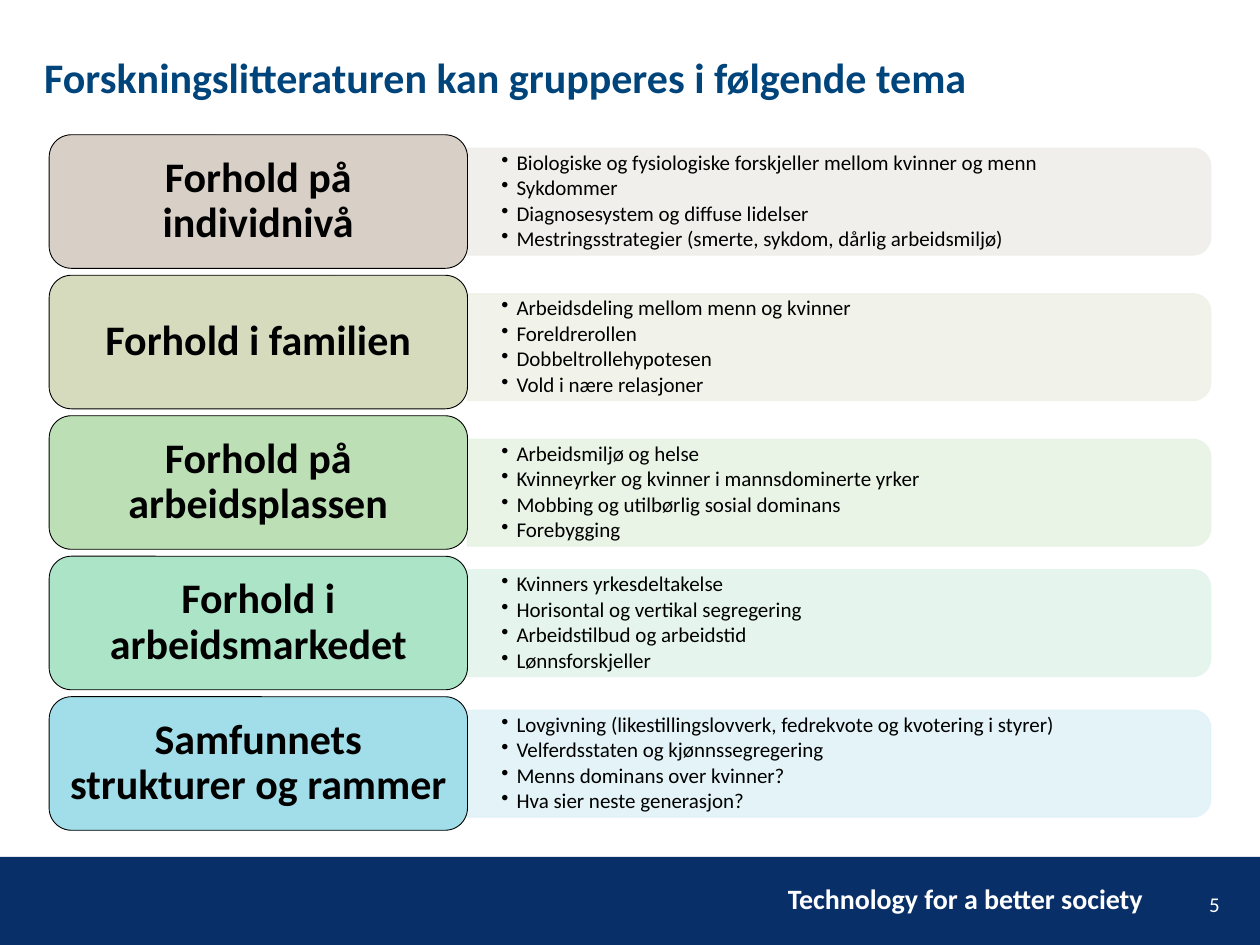
from lxml import etree
from pptx import Presentation
from pptx.dml.color import RGBColor
from pptx.enum.shapes import MSO_SHAPE
from pptx.enum.text import MSO_ANCHOR, PP_ALIGN
from pptx.oxml.ns import qn
from pptx.util import Inches, Pt

RECT = MSO_SHAPE.RECTANGLE
ROUNDED = MSO_SHAPE.ROUNDED_RECTANGLE
ROUNDED_SIDE = MSO_SHAPE.ROUND_2_SAME_RECTANGLE
TOP, MIDDLE = MSO_ANCHOR.TOP, MSO_ANCHOR.MIDDLE
LEFT, CENTER, RIGHT = PP_ALIGN.LEFT, PP_ALIGN.CENTER, PP_ALIGN.RIGHT

BLACK = RGBColor(0x00, 0x00, 0x00)
WHITE = RGBColor(0xFF, 0xFF, 0xFF)
NAVY = RGBColor(0x08, 0x2F, 0x68)
TITLE_BLUE = RGBColor(0x00, 0x44, 0x7C)
SAND, SAND_PALE = RGBColor(0xD8, 0xD0, 0xC7), RGBColor(0xF0, 0xEE, 0xEB)
OLIVE, OLIVE_PALE = RGBColor(0xD6, 0xDB, 0xBE), RGBColor(0xF0, 0xF2, 0xE8)
GREEN, GREEN_PALE = RGBColor(0xBC, 0xDF, 0xB5), RGBColor(0xE7, 0xF3, 0xE5)
MINT, MINT_PALE = RGBColor(0xAB, 0xE4, 0xC7), RGBColor(0xE3, 0xF5, 0xEC)
AQUA, AQUA_PALE = RGBColor(0xA1, 0xDE, 0xE9), RGBColor(0xE0, 0xF2, 0xF7)

# Grid of 100 columns by 75 rows on the slide
COLUMNS, ROWS = 100, 75
LABEL_COL, LABEL_COLS, LABEL_ROWS = 3.9, 33.2, 10.6
PANEL_COLS, PANEL_ROWS = 59, 8.5
FIRST_ROW, ROW_PITCH = 10.7, 11.15

# Heading, label colour, panel colour, panel shift in rows, points
THEMES = [
    ("Forhold på individnivå", SAND, SAND_PALE, 0, [
        "Biologiske og fysiologiske forskjeller mellom kvinner og menn",
        "Sykdommer",
        "Diagnosesystem og diffuse lidelser",
        "Mestringsstrategier (smerte, sykdom, dårlig arbeidsmiljø)"]),
    ("Forhold i familien", OLIVE, OLIVE_PALE, 0.4, [
        "Arbeidsdeling mellom menn og kvinner",
        "Foreldrerollen",
        "Dobbeltrollehypotesen",
        "Vold i nære relasjoner"]),
    ("Forhold på arbeidsplassen", GREEN, GREEN_PALE, 0.8, [
        "Arbeidsmiljø og helse",
        "Kvinneyrker og kvinner i mannsdominerte yrker",
        "Mobbing og utilbørlig sosial dominans",
        "Forebygging"]),
    ("Forhold i arbeidsmarkedet", MINT, MINT_PALE, 0, [
        "Kvinners yrkesdeltakelse",
        "Horisontal og vertikal segregering",
        "Arbeidstilbud og arbeidstid",
        "Lønnsforskjeller"]),
    ("Samfunnets strukturer og rammer", AQUA, AQUA_PALE, 0, [
        "Lovgivning (likestillingslovverk, fedrekvote og kvotering i styrer)",
        "Velferdsstaten og kjønnssegregering",
        "Menns dominans over kvinner?",
        "Hva sier neste generasjon?"]),
]


class SlideBuilder:
    font_name = "Calibri"

    def __init__(self, prs):
        self.cell_width = prs.slide_width / COLUMNS
        self.cell_height = prs.slide_height / ROWS
        self.slide = prs.slides.add_slide(prs.slide_layouts[6])

    def area(self, col, row, cols, rows):
        return (round(col * self.cell_width), round(row * self.cell_height),
                round(cols * self.cell_width), round(rows * self.cell_height))

    def shape(self, preset, area, fill, line=None):
        shape = self.slide.shapes.add_shape(preset, *self.area(*area))
        shape.shadow.inherit = False
        shape.fill.solid()
        shape.fill.fore_color.rgb = fill
        if line is None:
            shape.line.fill.background()
        else:
            shape.line.color.rgb = line
            shape.line.width = Pt(0.5)
        return shape

    def fill_text(self, shape, lines, size, color, bold=False, align=LEFT,
                  anchor=TOP, insets=(0.1, 0.05, 0.1, 0.05), spacing=None,
                  bullets=False):
        frame = shape.text_frame
        frame.word_wrap = True
        frame.vertical_anchor = anchor
        (frame.margin_left, frame.margin_top,
         frame.margin_right, frame.margin_bottom) = map(Inches, insets)
        for i, line in enumerate(lines):
            paragraph = frame.add_paragraph() if i else frame.paragraphs[0]
            paragraph.alignment = align
            paragraph.line_spacing = spacing
            if bullets:
                paragraph.space_after = Pt(1.6)
                self.bullet(paragraph)
            run = paragraph.add_run()
            run.text = line
            run.font.name = self.font_name
            run.font.size = Pt(size)
            run.font.bold = bold
            run.font.color.rgb = color

    def bullet(self, paragraph):
        properties = paragraph._p.get_or_add_pPr()
        properties.set("marL", str(Inches(0.12)))
        properties.set("indent", str(Inches(-0.12)))
        etree.SubElement(properties, qn("a:buChar")).set("char", "•")

    def text(self, area, lines, size, color, **style):
        box = self.slide.shapes.add_textbox(*self.area(*area))
        self.fill_text(box, lines, size, color, **style)

    def panel(self, col, middle, fill, points):
        # Turned a quarter so that the two rounded corners face right
        shape = self.shape(ROUNDED_SIDE,
                           (col + (PANEL_COLS - PANEL_ROWS) / 2,
                            middle - PANEL_COLS / 2, PANEL_ROWS, PANEL_COLS),
                           fill, fill)
        shape.rotation = 90
        for color in shape._element.spPr.iter(qn("a:srgbClr")):
            etree.SubElement(color, qn("a:alpha")).set("val", "90000")
        self.text((col, middle - PANEL_ROWS / 2, PANEL_COLS, PANEL_ROWS),
                  points, 12, BLACK, anchor=MIDDLE,
                  insets=(0.27, 0, 0.27, 0), spacing=0.9, bullets=True)

    def label(self, row, heading, fill):
        shape = self.shape(ROUNDED, (LABEL_COL, row, LABEL_COLS, LABEL_ROWS),
                           fill, BLACK)
        self.fill_text(shape, [heading], 24, BLACK, bold=True, align=CENTER,
                       anchor=MIDDLE, spacing=0.9)


def main():
    prs = Presentation()
    prs.slide_width, prs.slide_height = Inches(10), Inches(7.5)
    builder = SlideBuilder(prs)

    # Footer band
    builder.shape(RECT, (0, 68, COLUMNS, 7), NAVY)
    builder.text((48.4, 69.5, 43.3, 3.7), ["Technology for a better society"],
                 16, WHITE, bold=True, align=RIGHT)
    builder.text((92.2, 70.2, 5.6, 3.1), ["5"], 12, WHITE, align=RIGHT,
                 anchor=MIDDLE)

    # Title
    builder.text((3.5, 3.6, 92.2, 7),
                 ["Forskningslitteraturen kan grupperes i følgende tema"],
                 24, TITLE_BLUE, bold=True, insets=(0, 0.05, 0.1, 0.05))

    # One label with its panel of points per theme
    for i, (heading, fill, pale, shift, points) in enumerate(THEMES):
        row = FIRST_ROW + i * ROW_PITCH
        builder.panel(LABEL_COL + LABEL_COLS, row + LABEL_ROWS / 2 + shift,
                      pale, points)
        builder.label(row, heading, fill)

    prs.save("out.pptx")


if __name__ == "__main__":
    main()
